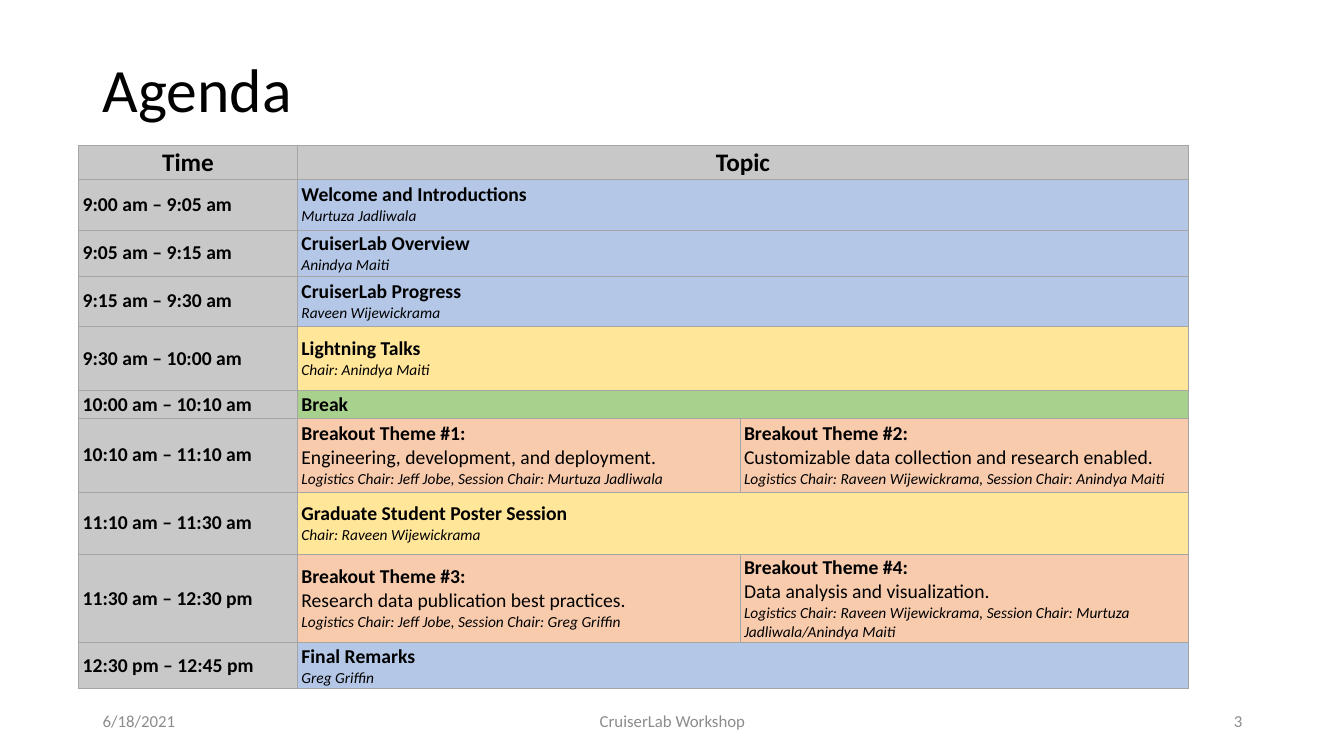
from copy import deepcopy

from lxml.etree import SubElement
from pptx import Presentation
from pptx.dml.color import RGBColor
from pptx.enum.text import MSO_ANCHOR as Anchor, PP_ALIGN as Align
from pptx.oxml.ns import qn
from pptx.util import Inches, Pt

TITLE = "Agenda"
HEADINGS = ("Time", "Topic")

# Time, kind, row height, then one or two topics.
# A topic is a tuple of (heading, detail, chairs); a missing part is left out.
SESSIONS = [
    ("9:00 am – 9:05 am", "talk", 0.5,
     [("Welcome and Introductions", None, "Murtuza Jadliwala")]),
    ("9:05 am – 9:15 am", "talk", 0.44,
     [("CruiserLab Overview", None, "Anindya Maiti")]),
    ("9:15 am – 9:30 am", "talk", 0.5,
     [("CruiserLab Progress", None, "Raveen Wijewickrama")]),
    ("9:30 am – 10:00 am", "showcase", 0.64,
     [("Lightning Talks", None, "Chair: Anindya Maiti")]),
    ("10:00 am – 10:10 am", "break", 0.27,
     [("Break", None, None)]),
    ("10:10 am – 11:10 am", "breakout", 0.73,
     [("Breakout Theme #1:", "Engineering, development, and deployment.",
       "Logistics Chair: Jeff Jobe, Session Chair: Murtuza Jadliwala"),
      ("Breakout Theme #2:", "Customizable data collection and research enabled.",
       "Logistics Chair: Raveen Wijewickrama, Session Chair: Anindya Maiti")]),
    ("11:10 am – 11:30 am", "showcase", 0.62,
     [("Graduate Student Poster Session", None, "Chair: Raveen Wijewickrama")]),
    ("11:30 am – 12:30 pm", "breakout", 0.64,
     [("Breakout Theme #3:", "Research data publication best practices.",
       "Logistics Chair: Jeff Jobe, Session Chair: Greg Griffin"),
      ("Breakout Theme #4:", "Data analysis and visualization.",
       "Logistics Chair: Raveen Wijewickrama, Session Chair: "
       "Murtuza Jadliwala/Anindya Maiti")]),
    ("12:30 pm – 12:45 pm", "talk", 0.44,
     [("Final Remarks", None, "Greg Griffin")]),
]

# Text, left, width, alignment
FOOTER = [
    ("6/18/2021", 0.92, 3, Align.LEFT),
    ("CruiserLab Workshop", 4.42, 4.5, Align.CENTER),
    ("3", 9.42, 3, Align.RIGHT),
]

THEME = {
    "font": "Calibri",
    "text": "000000",
    "muted": "8C8C8C",
    "border": "A5A5A5",
    "label": "C8C8C8",
    "kinds": {"talk": "B4C7E7", "showcase": "FFE699",
              "break": "A9D18E", "breakout": "F8CBAD"},
    "title": 44, "heading": 18, "body": 14, "chairs": 11, "footer": 12,
}
COLUMNS = (2.17, 4.39, 4.45)
HEADER_HEIGHT = 0.24
TABLE_LEFT, TABLE_TOP, TABLE_HEIGHT = 0.78, 1.44, 5.38


def write(paragraph, text, size=THEME["body"], color=THEME["text"], bold=False,
          italic=False, align=Align.LEFT):
    paragraph.alignment = align
    run = paragraph.add_run()
    run.text = text
    font = run.font
    font.name, font.size = THEME["font"], Pt(size)
    font.bold, font.italic = bold, italic
    font.color.rgb = RGBColor.from_string(color)
    return run


def break_line(paragraph, run):
    """Add a line break that keeps the type size of the run before it."""
    paragraph.add_line_break()
    paragraph._p[-1].append(deepcopy(run._r.rPr))


def add_text(slide, text, left, top, width, height, **style):
    frame = slide.shapes.add_textbox(
        Inches(left), Inches(top), Inches(width), Inches(height)).text_frame
    frame.word_wrap = True
    frame.vertical_anchor = Anchor.MIDDLE
    write(frame.paragraphs[0], text, **style)
    return frame


def style_cell(cell, fill):
    cell.vertical_anchor = Anchor.MIDDLE
    cell.margin_left = cell.margin_right = Inches(0.04)
    cell.margin_top = cell.margin_bottom = Inches(0.02)
    properties = cell._tc.get_or_add_tcPr()
    for side in ("a:lnL", "a:lnR", "a:lnT", "a:lnB"):
        line = SubElement(properties, qn(side), w=str(Pt(0.5)))
        SubElement(SubElement(line, qn("a:solidFill")), qn("a:srgbClr"),
                   val=THEME["border"])
    cell.fill.solid()
    cell.fill.fore_color.rgb = RGBColor.from_string(fill)


def write_topic(cell, heading, detail, chairs):
    paragraph = cell.text_frame.paragraphs[0]
    heading_run = write(paragraph, heading, bold=True)
    if detail or chairs:
        break_line(paragraph, heading_run)
    if detail:
        write(paragraph, detail)
        paragraph = cell.text_frame.add_paragraph()
    if chairs:
        write(paragraph, chairs, size=THEME["chairs"], italic=True)


def add_agenda(slide):
    frame = slide.shapes.add_table(
        len(SESSIONS) + 1, len(COLUMNS), Inches(TABLE_LEFT), Inches(TABLE_TOP),
        Inches(sum(COLUMNS)), Inches(TABLE_HEIGHT))
    agenda = frame.table
    agenda.horz_banding = False
    for column, width in zip(agenda.columns, COLUMNS):
        column.width = Inches(width)
    heights = [HEADER_HEIGHT] + [session[2] for session in SESSIONS]
    for row, height in zip(agenda.rows, heights):
        row.height = Inches(height)
    frame.height = Inches(TABLE_HEIGHT)

    for column, heading in enumerate(HEADINGS):
        write(agenda.cell(0, column).text_frame.paragraphs[0], heading,
              size=THEME["heading"], bold=True, align=Align.CENTER)
    for column in range(len(COLUMNS)):
        style_cell(agenda.cell(0, column), THEME["label"])
    agenda.cell(0, 1).merge(agenda.cell(0, 2))

    for row, (time, kind, _, topics) in enumerate(SESSIONS, start=1):
        time_cell, *topic_cells = agenda.rows[row].cells
        style_cell(time_cell, THEME["label"])
        write(time_cell.text_frame.paragraphs[0], time, bold=True)
        for cell in topic_cells:
            style_cell(cell, THEME["kinds"][kind])
        for cell, topic in zip(topic_cells, topics):
            write_topic(cell, *topic)
        if len(topics) == 1:
            topic_cells[0].merge(topic_cells[1])


def main():
    deck = Presentation()
    deck.slide_width, deck.slide_height = Inches(13.33), Inches(7.5)
    slide = deck.slides.add_slide(deck.slide_layouts[6])
    title = add_text(slide, TITLE, 0.92, 0.4, 11.5, 1.04, size=THEME["title"])
    title.paragraphs[0].line_spacing = 0.9
    add_agenda(slide)
    for text, left, width, align in FOOTER:
        add_text(slide, text, left, 6.95, width, 0.4, size=THEME["footer"],
                 color=THEME["muted"], align=align)
    deck.save("out.pptx")


if __name__ == "__main__":
    main()
